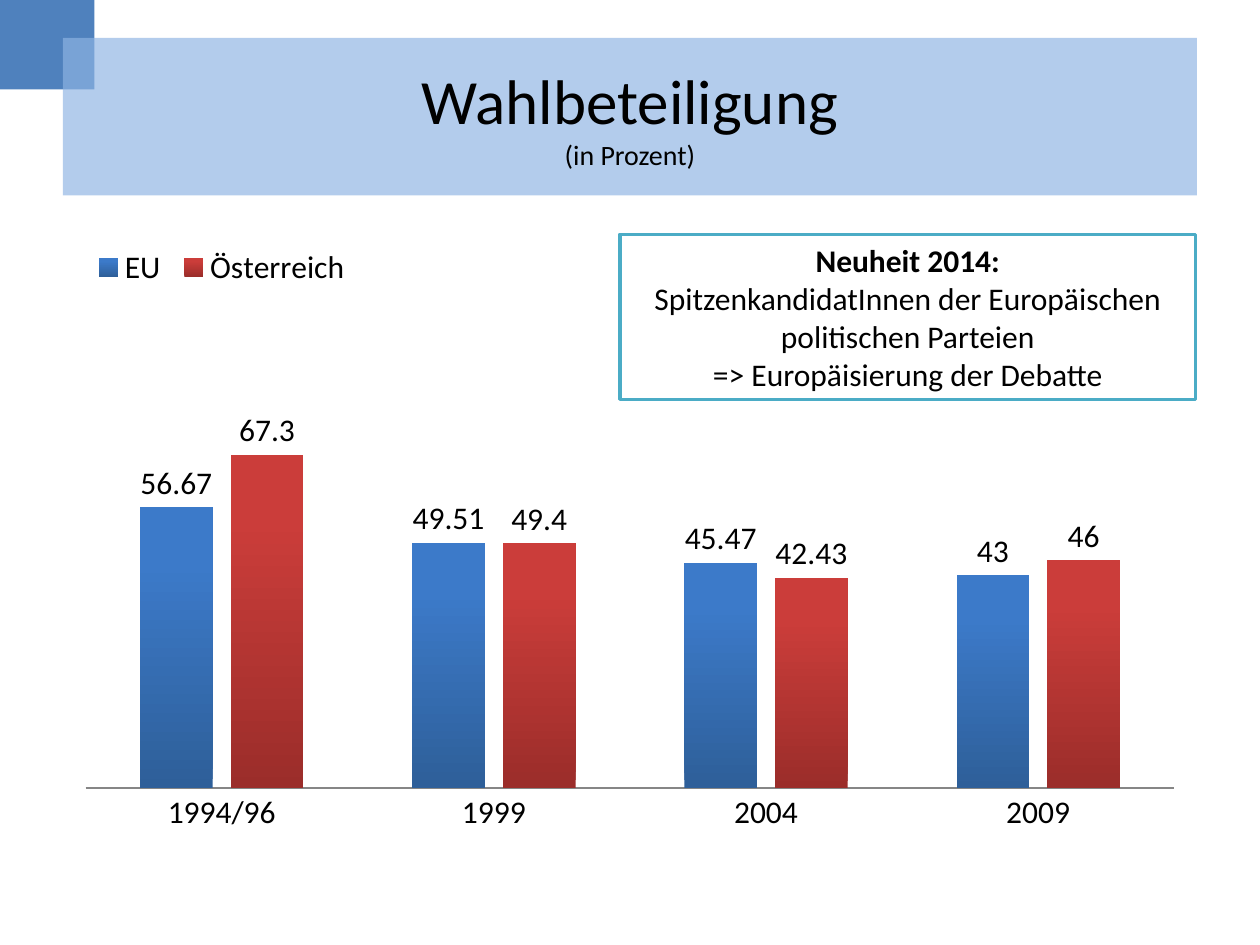
import lxml.etree
import pptx
import pptx.chart.data
import pptx.dml.color
import pptx.enum.chart
import pptx.enum.shapes
import pptx.enum.text
import pptx.oxml
import pptx.oxml.ns
import pptx.util
from pptx.util import Inches

COLORS = {
    "text": "000000",
    "white": "FFFFFF",
    "corner": "4F81BD",
    "banner": "8EB4E3",
    "box_line": "4BACC6",
    "axis": "868686",
}
# Dark bottom and light top of the columns
SERIES_GRADIENTS = [("2E5F99", "3C7AC9"), ("9B2D2A", "CB3D3A")]


def rgb(value):
    return pptx.dml.color.RGBColor.from_string(value)


class SlideBuilder:
    def __init__(self, slide, font_name="Calibri"):
        self.slide = slide
        self.font_name = font_name

    def style_font(self, font, size, bold=False):
        font.name = self.font_name
        font.size = pptx.util.Pt(size)
        font.bold = bold
        font.color.rgb = rgb(COLORS["text"])

    def rectangle(self, left, top, width, height, fill, line=None, opacity=None):
        shape = self.slide.shapes.add_shape(
            pptx.enum.shapes.MSO_SHAPE.RECTANGLE,
            Inches(left), Inches(top), Inches(width), Inches(height))
        shape.shadow.inherit = False
        shape.fill.solid()
        shape.fill.fore_color.rgb = rgb(fill)
        if opacity is not None:
            color = shape.fill._xPr.find(".//" + pptx.oxml.ns.qn("a:srgbClr"))
            alpha = lxml.etree.SubElement(color, pptx.oxml.ns.qn("a:alpha"))
            alpha.set("val", str(opacity * 1000))
        if line:
            shape.line.color.rgb = rgb(line)
            shape.line.width = pptx.util.Pt(2)
        else:
            shape.line.fill.background()
        return shape

    def text(self, shape, text, sizes, bold_first=False):
        """Write centred text; sizes holds one size per run."""
        frame = shape.text_frame
        frame.word_wrap = True
        frame.vertical_anchor = pptx.enum.text.MSO_ANCHOR.MIDDLE
        frame.text = text
        for paragraph in frame.paragraphs:
            paragraph.alignment = pptx.enum.text.PP_ALIGN.CENTER
        runs = [run for paragraph in frame.paragraphs for run in paragraph.runs]
        for index, (run, size) in enumerate(zip(runs, sizes)):
            self.style_font(run.font, size, bold_first and index == 0)

    def manual_layout(self, element, x, y, width, height, inner=False):
        """Place a chart part by fractions of the chart area."""
        for old in element.findall(pptx.oxml.ns.qn("c:layout")):
            element.remove(old)
        target = '<c:layoutTarget val="inner"/>' if inner else ""
        layout = pptx.oxml.parse_xml(
            f'<c:layout {pptx.oxml.ns.nsdecls("c")}><c:manualLayout>{target}'
            '<c:xMode val="edge"/><c:yMode val="edge"/>'
            f'<c:x val="{x}"/><c:y val="{y}"/>'
            f'<c:w val="{width}"/><c:h val="{height}"/>'
            '</c:manualLayout></c:layout>')
        if inner:
            element.insert(0, layout)
        else:
            element.find(pptx.oxml.ns.qn("c:legendPos")).addnext(layout)

    def column_chart(self, left, top, width, height, categories, series_values):
        chart_data = pptx.chart.data.CategoryChartData()
        chart_data.categories = categories
        for name, values in series_values.items():
            chart_data.add_series(name, values)
        chart = self.slide.shapes.add_chart(
            pptx.enum.chart.XL_CHART_TYPE.COLUMN_CLUSTERED,
            Inches(left), Inches(top), Inches(width), Inches(height),
            chart_data).chart
        chart.has_title = False
        self.style_font(chart.font, 18)

        # Legend
        chart.has_legend = True
        chart.legend.position = pptx.enum.chart.XL_LEGEND_POSITION.TOP
        chart.legend.include_in_layout = False
        self.manual_layout(chart.legend._element, 0.02, 0.04, 0.24, 0.07)

        # Axes
        value_axis = chart.value_axis
        value_axis.minimum_scale, value_axis.maximum_scale = 0, 100
        value_axis.has_major_gridlines = False
        value_axis.visible = False
        category_axis = chart.category_axis
        category_axis.major_tick_mark = pptx.enum.chart.XL_TICK_MARK.NONE
        category_axis.format.line.color.rgb = rgb(COLORS["axis"])

        # Columns and value labels
        plot = chart.plots[0]
        plot.gap_width, plot.overlap = 150, -25
        plot.vary_by_categories = False
        for series, gradient in zip(plot.series, SERIES_GRADIENTS):
            fill = series.format.fill
            fill.gradient()
            fill.gradient_angle = 90
            for stop, color, position in zip(fill.gradient_stops, gradient, (0, 0.8)):
                stop.color.rgb = rgb(color)
                stop.position = position
            labels = series.data_labels
            labels.show_value = True
            labels.position = pptx.enum.chart.XL_LABEL_POSITION.OUTSIDE_END
            self.style_font(labels.font, 18)
        plot_area = chart._chartSpace.chart.plotArea
        self.manual_layout(plot_area, 0.02, 0.116, 0.96, 0.794, inner=True)


def main():
    presentation = pptx.Presentation()
    presentation.slide_width, presentation.slide_height = Inches(10), Inches(7.5)
    builder = SlideBuilder(presentation.slides.add_slide(presentation.slide_layouts[6]))

    # Corner and title banner
    builder.rectangle(0, 0, 0.75, 0.71, COLORS["corner"])
    banner = builder.rectangle(0.5, 0.3, 9, 1.25, COLORS["banner"], opacity=67)
    builder.text(banner, "Wahlbeteiligung\v(in Prozent)", [36, 16])

    # Turnout chart
    builder.column_chart(
        0.5, 1.75, 9, 4.95, ["1994/96", "1999", "2004", "2009"],
        {"EU": [56.67, 49.51, 45.47, 43], "Österreich": [67.3, 49.4, 42.43, 46]})

    # Note on 2014
    note = builder.rectangle(4.92, 1.86, 4.57, 1.31, COLORS["white"], COLORS["box_line"])
    builder.text(
        note,
        "Neuheit 2014:\nSpitzenkandidatInnen der Europäischen politischen Parteien\n"
        "=> Europäisierung der Debatte",
        [18, 18, 18], bold_first=True)

    presentation.save("out.pptx")


if __name__ == "__main__":
    main()
